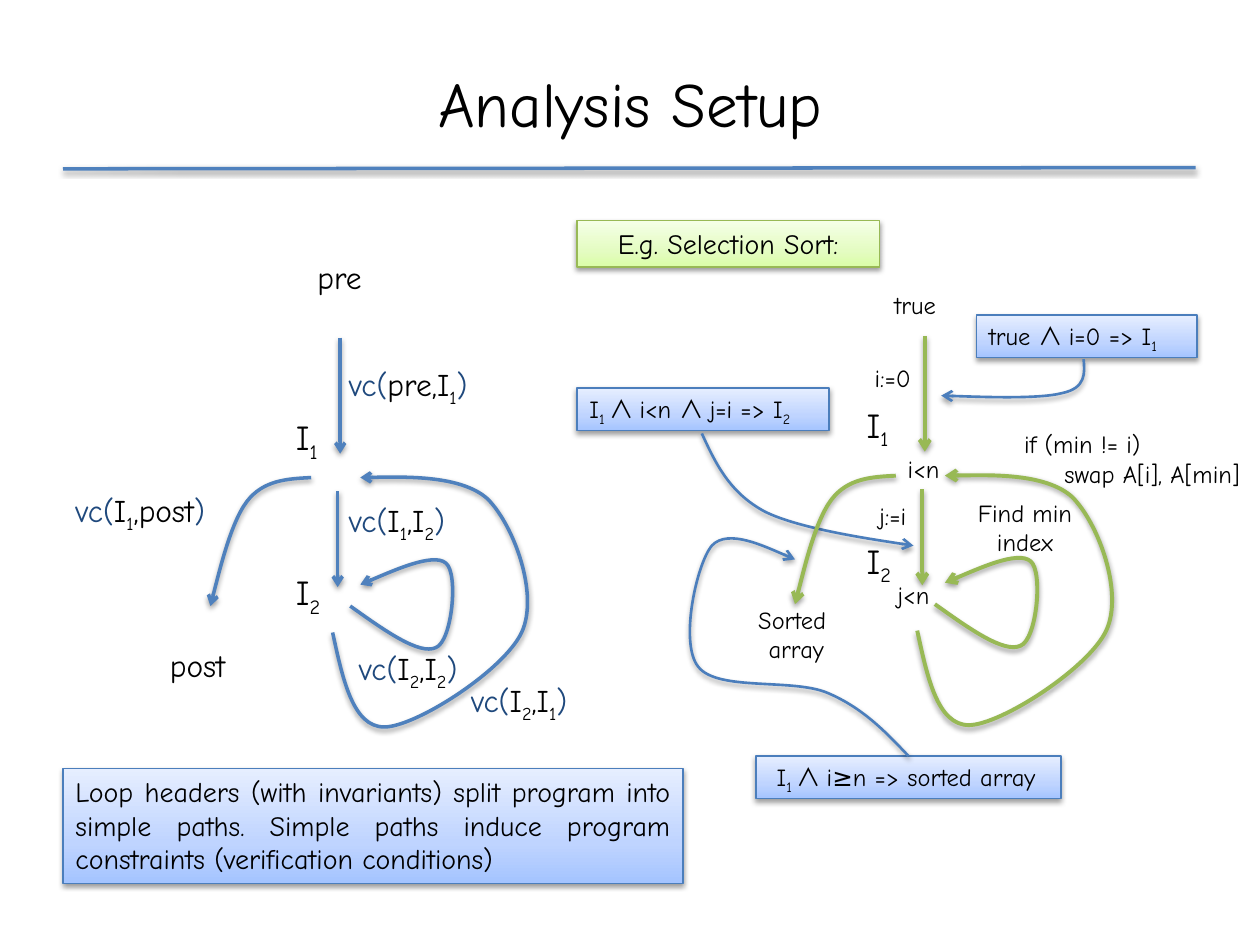
from copy import deepcopy

from lxml.etree import SubElement
from pptx import Presentation
from pptx.dml.color import RGBColor
from pptx.enum.shapes import MSO_CONNECTOR, MSO_SHAPE
from pptx.enum.text import MSO_ANCHOR, MSO_AUTO_SIZE, PP_ALIGN
from pptx.oxml.ns import qn
from pptx.util import Inches, Pt

COLOURS = {
    "text": "000000", "accent": "1F497D", "blue": "4F81BD", "callout": "4B7EBC", "green": "98B955",
}
GRADIENTS = {
    "callout": ("A4C4FF", "BFD4FF", "E6EEFF"),
    "green": ("DAFDA7", "E4FCC2", "F5FFE7"),
}
COLUMNS, ROWS = 100, 75
FLOW_LINES = [((27, 26.8), (27, 36)), ((26.8, 39), (26.8, 46.6))]
FLOW_CURVES = [
    [(27.8, 48.1), (30.6, 50.1), (33.3, 52), (34.6, 51.4), (35.9, 50.9),
     (36.4, 45.5), (35.4, 44.7), (34.4, 43.8), (28.6, 46.4), (28.6, 46.4)],
    [(26.4, 50.2), (27.2, 53.9), (28, 57.7), (30.5, 57.7), (33, 57.7), (40, 53.2), (41.4, 50.2),
     (42.8, 47.2), (40.8, 41.7), (38.7, 39.6), (36.5, 37.6), (28.6, 37.9), (28.6, 37.9)],
    [(24.7, 37.9), (22.8, 38), (20.9, 38.1), (19.6, 39.8), (18.3, 41.5), (16.7, 48.1), (16.7, 48.1)],
]
CALLOUT_CURVES = [
    [(86, 28.5), (86.1, 29.6), (86.2, 30.8), (84.3, 31.2), (82.4, 31.7), (74.7, 31.4), (74.7, 31.4)],
    [(72.1, 60), (70.3, 58.1), (68.5, 56.2), (65.7, 55), (62.9, 53.8), (56.9, 54.9), (55.4, 52.9),
     (53.9, 51), (55.3, 44.7), (56.5, 43.3), (57.8, 41.9), (63.1, 44.4), (63.1, 44.4)],
    [(55.7, 34.4), (56.8, 36.8), (57.9, 39.1), (60.7, 40.6), (63.5, 42), (72.5, 43.3), (72.5, 43.3)],
]


class SlideBuilder:
    """Draws styled text, boxes and arrows on one slide, measured in grid columns and rows."""

    def __init__(self, presentation):
        self.slide = presentation.slides.add_slide(presentation.slide_layouts[6])
        self.column = presentation.slide_width / COLUMNS
        self.row = presentation.slide_height / ROWS
        self.font, self.symbol_font = "Comic Neue", "Noto Sans CJK JP"

    def place(self, x, y):
        return round(x * self.column), round(y * self.row)

    def colour(self, name):
        return RGBColor.from_string(COLOURS.get(name, name))

    def add_shadow(self, shape):
        effects = SubElement(shape._element.spPr, qn("a:effectLst"))
        shadow = SubElement(effects, qn("a:outerShdw"), blurRad=str(Pt(3.1)), dist=str(Pt(1.6)),
                            dir="5400000", rotWithShape="0")
        black = SubElement(shadow, qn("a:srgbClr"), val=COLOURS["text"])
        SubElement(black, qn("a:alpha"), val="38000")

    def style_line(self, shape, colour, width, arrow):
        shape.line.color.rgb = self.colour(colour)
        shape.line.width = Pt(width)
        if arrow:
            SubElement(shape._element.spPr.find(qn("a:ln")), qn("a:tailEnd"), type="arrow")
        self.add_shadow(shape)

    def line(self, start, end, colour, width, arrow=True):
        connector = self.slide.shapes.add_connector(
            MSO_CONNECTOR.STRAIGHT, *self.place(*start), *self.place(*end))
        self.style_line(connector, colour, width, arrow)

    def curve(self, points, colour, width):
        start, *others = [self.place(*point) for point in points]
        builder = self.slide.shapes.build_freeform(*start)
        builder.add_line_segments(others, close=False)
        shape = builder.convert_to_shape()
        shape.fill.background()
        outline = shape._element.find(".//" + qn("a:path"))
        segments = outline.findall(qn("a:lnTo"))
        for first in range(0, len(segments), 3):
            bezier = SubElement(outline, qn("a:cubicBezTo"))
            for segment in segments[first:first + 3]:
                bezier.append(segment[0])
                outline.remove(segment)
        self.style_line(shape, colour, width, True)

    def set_text(self, shape, text, size, align, anchor, wrap=True):
        frame = shape.text_frame
        frame.word_wrap = wrap
        frame.auto_size = MSO_AUTO_SIZE.SHAPE_TO_FIT_TEXT
        frame.vertical_anchor = anchor
        for index, content in enumerate(text.split("\n")):
            paragraph = frame.add_paragraph() if index else frame.paragraphs[0]
            paragraph.alignment = align
            paragraph.font.size = Pt(size)
            paragraph.font.name = self.font
            paragraph.font.color.rgb = self.colour("text")
            for piece in content.split("|"):
                run = paragraph.add_run()
                run.text = piece.lstrip("_")
                if piece.startswith("_"):
                    run.font._element.set("baseline", "-25000")
                elif piece == "∧ ":
                    run.font.name = self.symbol_font
                elif piece in ("vc(", ")"):
                    run.font.color.rgb = self.colour("accent")
        return frame

    def text(self, x, y, width, height, text, size, align=PP_ALIGN.LEFT, anchor=MSO_ANCHOR.TOP,
             wrap=True):
        shape = self.slide.shapes.add_textbox(*self.place(x, y), *self.place(width, height))
        return self.set_text(shape, text, size, align, anchor, wrap)

    def centred(self, x, y, width, height, text, size=14):
        self.text(x, y, width, height, text, size, PP_ALIGN.CENTER, MSO_ANCHOR.MIDDLE)

    def box(self, x, y, width, height, text, size=14, style="callout", align=PP_ALIGN.LEFT):
        shape = self.slide.shapes.add_shape(
            MSO_SHAPE.RECTANGLE, *self.place(x, y), *self.place(width, height))
        shape.fill.gradient()
        shape.fill.gradient_angle = 90
        stops = shape._element.spPr.find(".//" + qn("a:gsLst"))
        stops.append(deepcopy(stops[0]))
        for stop, position, shade in zip(shape.fill.gradient_stops, (0, 0.35, 1), GRADIENTS[style]):
            stop.position = position
            stop.color.rgb = self.colour(shade)
        self.style_line(shape, style, 0.75, False)
        self.set_text(shape, text, size, align, MSO_ANCHOR.TOP)

    def flow(self, right, down, colour, width):
        def move(points):
            return [(x + right, y + down) for x, y in points]

        for points in FLOW_LINES:
            self.line(*move(points), colour, width)
        for points in FLOW_CURVES:
            self.curve(move(points), colour, width)


def main():
    presentation = Presentation()
    presentation.slide_width, presentation.slide_height = Inches(10), Inches(7.5)
    builder = SlideBuilder(presentation)

    builder.line((5, 13.4), (94.9, 13.3), "blue", 2, arrow=False)
    builder.centred(5, 3, 90, 10.3, "Analysis Setup", 36)

    builder.flow(0, 0, "blue", 2)
    for x, y, width, label in [
        (12.5, 50.8, 7.5, "post"),
        (24.2, 20, 7.5, "pre"),
        (26.7, 28.5, 13.3, "vc(|pre,I|_1|)"),
        (5, 38.5, 15, "vc(|I|_1|,post|)"),
        (26.7, 39.3, 13.3, "vc(|I|_1|,I|_2|)"),
        (27.5, 51, 13.3, "vc(|I|_2|,I|_2|)"),
        (36.4, 53.6, 13.3, "vc(|I|_2|,I|_1|)"),
    ]:
        builder.text(x, y, width, 4, label, 18)
    builder.box(5, 61, 49.2, 9.1,
                "Loop headers (with invariants) split program into simple paths. "
                "Simple paths induce program constraints (verification conditions)",
                16, align=PP_ALIGN.JUSTIFY)

    builder.box(77.5, 25, 17.5, 3.4, "true |∧ |i=0 => I|_1")
    builder.box(60, 60, 24.2, 3.4, " I|_1 |∧ |i≥n => sorted array")
    builder.box(45.8, 30.8, 20, 3.4, "I|_1 |∧ |i<n |∧ |j=i => I|_2")
    for points in CALLOUT_CURVES:
        builder.curve(points, "callout", 1.5)

    builder.flow(46.4, -0.15, "green", 2.25)
    for x, y, width, height, label in [
        (57.2, 47.5, 12, 5.7, "Sorted \narray"),
        (70.8, 35.5, 5, 3.4, "i<n"),
        (70, 45.5, 5, 3.4, "j<n"),
        (75.8, 39, 11.1, 5.7, "Find min index"),
        (67.5, 28.3, 6.7, 3.4, "i:=0"),
        (67.5, 39.2, 6.7, 3.4, "j:=i"),
    ]:
        builder.centred(x, y, width, height, label)
    builder.text(70, 22.5, 7.5, 3.4, "true", 14)
    swap = builder.text(80.3, 33.6, 19.7, 5.7, "if (min != i)\nswap A[i], A[min]", 14)
    swap.paragraphs[1]._p.get_or_add_pPr().set("marL", str(Inches(0.32)))
    for x, y, label in [(22.5, 32.5, "I|_1"), (22.5, 44.8, "I|_2"),
                        (67.8, 31.5, "I|_1"), (67.8, 42.3, "I|_2")]:
        builder.text(x, y, 4.5, 4.4, label, 20, wrap=False)
    builder.box(45.8, 17.5, 24, 3.7, "E.g. Selection Sort:", 16, "green", PP_ALIGN.CENTER)
    presentation.save("out.pptx")


if __name__ == "__main__":
    main()
